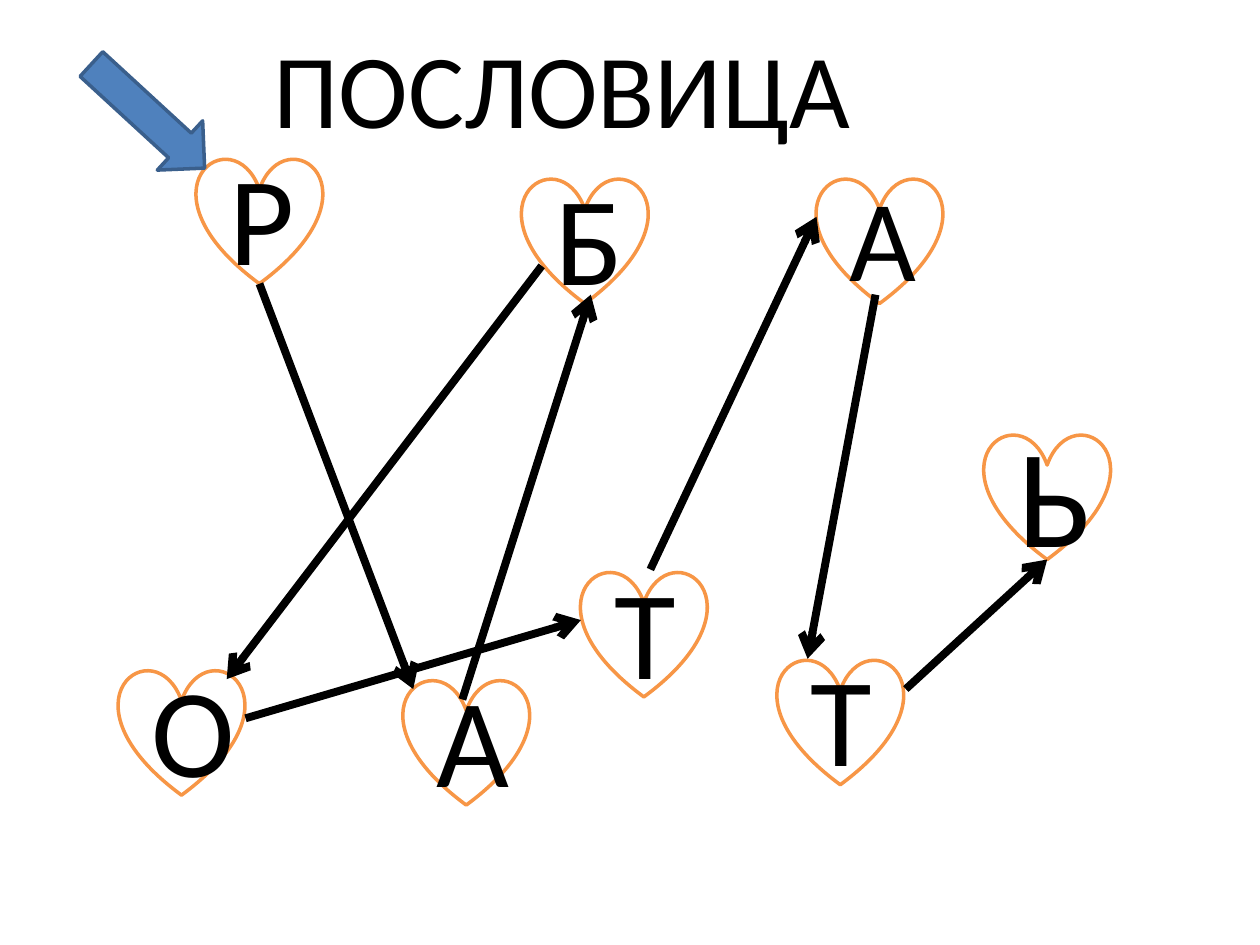
import pptx
import pptx.dml.color
import pptx.enum.shapes
import pptx.enum.text
import pptx.oxml
import pptx.oxml.ns
import pptx.util
from pptx.util import Cm

RGBColor = pptx.dml.color.RGBColor
BLACK = RGBColor(0x00, 0x00, 0x00)
WHITE = RGBColor(0xFF, 0xFF, 0xFF)
ORANGE = RGBColor(0xF7, 0x96, 0x46)
BLUE = RGBColor(0x4F, 0x81, 0xBD)
DARK_BLUE = RGBColor(0x3A, 0x5F, 0x8C)
SHAPES = pptx.enum.shapes.MSO_SHAPE
HEART_SIZE = 2.54

HEARTS = [
    ("Р", 3.96, 3.18, 72),
    ("Б", 10.52, 3.58, 72),
    ("Т", 15.67, 13.28, 72),
    ("О", 2.39, 13.49, 72),
    ("А", 16.46, 3.58, 66),
    ("Ь", 19.84, 8.74, 80),
    ("А", 8.13, 13.69, 72),
    ("Т", 11.71, 11.51, 72),
]

ARROWS = [
    (5.23, 5.72, 8.33, 13.89),
    (9.32, 14.1, 11.91, 5.94),
    (10.92, 5.36, 4.57, 13.69),
    (4.95, 14.48, 11.71, 12.5),
    (13.11, 11.48, 16.46, 4.37),
    (17.65, 5.94, 16.28, 13.28),
    (18.26, 13.89, 21.11, 11.28),
]


def write_text(shape, text, size):
    """Write one centred run of black text in the middle of a shape."""
    frame = shape.text_frame
    frame.vertical_anchor = pptx.enum.text.MSO_ANCHOR.MIDDLE
    para = frame.paragraphs[0]
    para.alignment = pptx.enum.text.PP_ALIGN.CENTER
    span = para.add_run()
    span.text = text
    span.font.name = "Calibri"
    span.font.size = pptx.util.Pt(size)
    span.font.color.rgb = BLACK


def set_title(page, text):
    """Place and fill the title placeholder."""
    title = page.shapes.title
    title.left, title.top = Cm(1.27), Cm(0.89)
    title.width, title.height = Cm(20.12), Cm(1.7)
    title.text_frame.auto_size = pptx.enum.text.MSO_AUTO_SIZE.NONE
    write_text(title, text, 60)


def add_outlined(page, kind, left, top, width, height, fill, outline):
    """Add a filled preset shape with a thin outline."""
    shape = page.shapes.add_shape(kind, Cm(left), Cm(top), Cm(width), Cm(height))
    shape.shadow.inherit = False
    shape.fill.solid()
    shape.fill.fore_color.rgb = fill
    shape.line.color.rgb = outline
    shape.line.width = pptx.util.Pt(2)
    return shape


def add_heart(page, letter, left, top, size):
    """Add a heart holding one letter."""
    heart = add_outlined(page, SHAPES.HEART, left, top, HEART_SIZE, HEART_SIZE, WHITE, ORANGE)
    write_text(heart, letter, size)


def add_arrow(page, x1, y1, x2, y2):
    """Add a thick black line with an open arrowhead at its end."""
    arrow = page.shapes.add_connector(
        pptx.enum.shapes.MSO_CONNECTOR.STRAIGHT, Cm(x1), Cm(y1), Cm(x2), Cm(y2)
    )
    arrow.line.color.rgb = BLACK
    arrow.line.width = pptx.util.Pt(4.5)
    namespace = pptx.oxml.ns.nsdecls("a")
    head = pptx.oxml.parse_xml(f'<a:tailEnd {namespace} type="arrow"/>')
    arrow.line._get_or_add_ln().append(head)
    arrow._element.spPr.append(pptx.oxml.parse_xml(f"<a:effectLst {namespace}/>"))


def main():
    """Build the proverb slide and save it."""
    deck = pptx.Presentation()
    deck.slide_width, deck.slide_height = Cm(25.4), Cm(19.05)
    page = deck.slides.add_slide(deck.slide_layouts.get_by_name("Title Only"))
    set_title(page, "ПОСЛОВИЦА")
    for heart in HEARTS:
        add_heart(page, *heart)
    for arrow in ARROWS:
        add_arrow(page, *arrow)
    start = add_outlined(page, SHAPES.DOWN_ARROW, 2.31, 0.79, 1.35, 3.1, BLUE, DARK_BLUE)
    start.rotation = 312.6
    deck.save("out.pptx")


if __name__ == "__main__":
    main()
